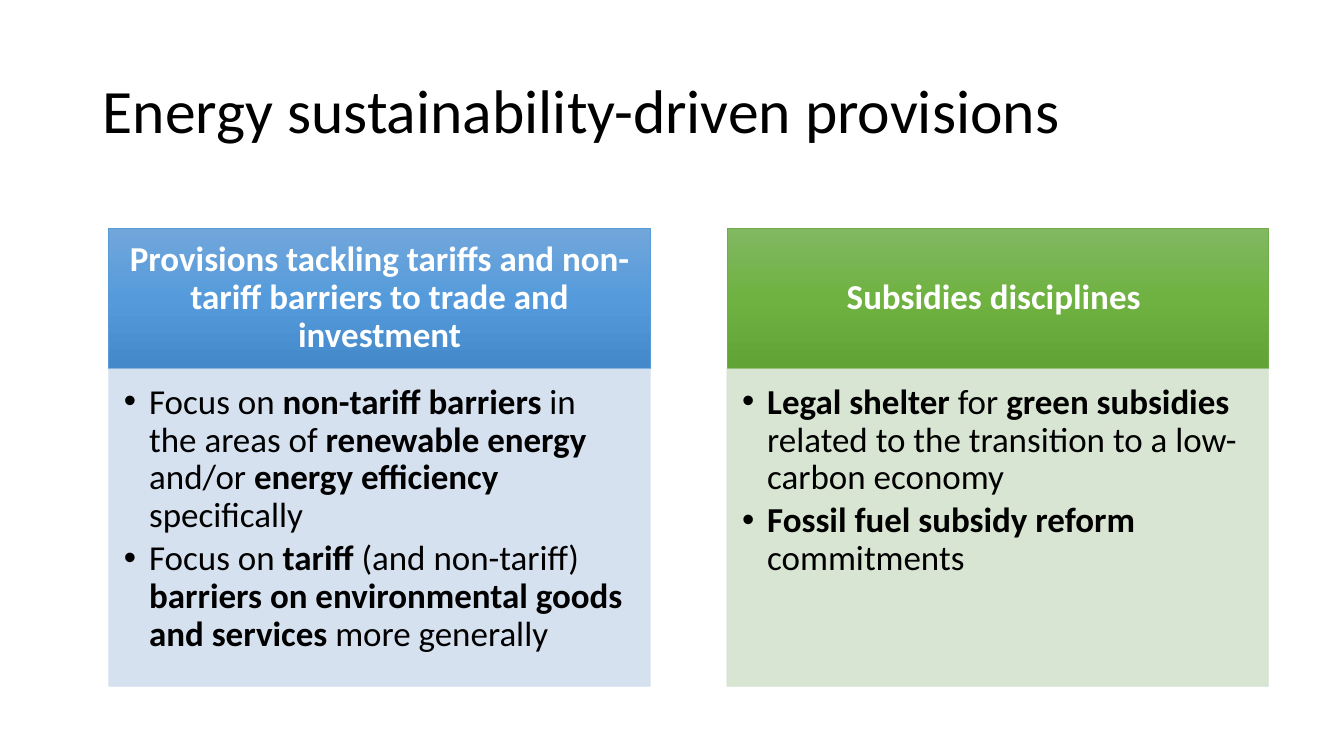
from lxml import etree
from pptx import Presentation
from pptx import util as u
from pptx.dml.color import RGBColor
from pptx.enum import shapes, text
from pptx.oxml import parse_xml
from pptx.oxml.ns import nsdecls, qn

# Content: each bullet is a list of (words, bold) runs
TITLE = "Energy sustainability-driven provisions"
COLUMNS = [
    {
        "heading": "Provisions tackling tariffs and non-tariff barriers to trade and investment",
        "gradient": ["71A6DB", "559BDB", "448ACA"],
        "edge": "5B9BD5",
        "tint": "D2DEEF",
        "bullets": [
            [("Focus on ", False), ("non-tariff barriers ", True),
             ("in the areas of ", False), ("renewable energy ", True),
             ("and/or ", False), ("energy efficiency ", True),
             ("specifically", False)],
            [("Focus on ", False), ("tariff", True), (" (and non-tariff) ", False),
             ("barriers on environmental goods and services ", True),
             ("more generally", False)],
        ],
    },
    {
        "heading": "Subsidies disciplines ",
        "gradient": ["81B861", "6FB242", "62A336"],
        "edge": "70AD47",
        "tint": "D5E3CF",
        "bullets": [
            [("Legal shelter ", True), ("for ", False), ("green subsidies ", True),
             ("related to the transition to a low-carbon economy", False)],
            [("Fossil fuel subsidy reform ", True), ("commitments", False)],
        ],
    },
]

# Layout in inches
FONT, TITLE_SIZE, TEXT_SIZE = "Calibri", 44, 25
LEFT, TOP, WIDTH, PITCH = 1.08, 2.27, 5.37, 6.13
HEAD_HEIGHT, BODY_TOP, BODY_HEIGHT = 1.38, 3.66, 3.15
INDENT = 0.25
OPACITY = 90


def color(value):
    return RGBColor.from_string(value)


def set_frame(box, insets, anchor):
    frame = box.text_frame
    frame.word_wrap = True
    frame.vertical_anchor = anchor
    (frame.margin_left, frame.margin_top,
     frame.margin_right, frame.margin_bottom) = map(u.Inches, insets)
    return frame


def write(para, runs, size, ink, space_after=0):
    para.line_spacing = 0.9
    para.space_after = u.Pt(space_after)
    for words, bold in runs:
        span = para.add_run()
        span.text = words
        span.font.name, span.font.size, span.font.bold = FONT, u.Pt(size), bold
        span.font.color.rgb = color(ink)


def add_box(left, top, height, edge):
    box = page.shapes.add_shape(
        shapes.MSO_SHAPE.RECTANGLE, *map(u.Inches, (left, top, WIDTH, height)))
    box.shadow.inherit = False
    box.line.color.rgb = color(edge)
    box.line.width = u.Pt(0.5)
    return box


def shade(box, stops):
    """Fill a box with evenly spaced colours running downwards."""
    step = 100000 // (len(stops) - 1)
    marks = "".join(
        f'<a:gs pos="{i * step}"><a:srgbClr val="{stop}"/></a:gs>'
        for i, stop in enumerate(stops))
    gradient = parse_xml(
        f'<a:gradFill {nsdecls("a")} rotWithShape="1"><a:gsLst>{marks}</a:gsLst>'
        '<a:lin ang="5400000" scaled="0"/></a:gradFill>')
    box.fill.solid()
    properties = box.element.spPr
    properties.replace(properties.find(qn("a:solidFill")), gradient)


def add_bullet(para):
    properties = para._p.get_or_add_pPr()
    properties.set("marL", str(u.Inches(INDENT)))
    properties.set("indent", str(-u.Inches(INDENT)))
    etree.SubElement(properties, qn("a:buFont")).set("typeface", "Arial")
    etree.SubElement(properties, qn("a:buChar")).set("char", "•")


deck = Presentation()
deck.slide_width, deck.slide_height = u.Inches(13.33), u.Inches(7.5)
page = deck.slides.add_slide(deck.slide_layouts[6])

# Title
title = page.shapes.add_textbox(*map(u.Inches, (0.92, 0.4, 11.5, 1.45)))
frame = set_frame(title, (0.1, 0.05, 0.1, 0.05), text.MSO_ANCHOR.MIDDLE)
write(frame.paragraphs[0], [(TITLE, False)], TITLE_SIZE, "000000")

for number, column in enumerate(COLUMNS):
    left = LEFT + number * PITCH

    # Heading band
    head = add_box(left, TOP, HEAD_HEIGHT, column["edge"])
    shade(head, column["gradient"])
    frame = set_frame(head, (0.19, 0.11, 0.19, 0.11), text.MSO_ANCHOR.MIDDLE)
    para = frame.paragraphs[0]
    para.alignment = text.PP_ALIGN.CENTER
    write(para, [(column["heading"], True)], TEXT_SIZE, "FFFFFF")

    # Bullet panel
    body = add_box(left, BODY_TOP, BODY_HEIGHT, column["tint"])
    body.fill.solid()
    body.fill.fore_color.rgb = color(column["tint"])
    for paint in body.element.spPr.iter(qn("a:srgbClr")):
        etree.SubElement(paint, qn("a:alpha")).set("val", str(OPACITY * 1000))
    frame = set_frame(body, (0.15, 0.15, 0.19, 0.22), text.MSO_ANCHOR.TOP)
    for index, runs in enumerate(column["bullets"]):
        para = frame.add_paragraph() if index else frame.paragraphs[0]
        para.alignment = text.PP_ALIGN.LEFT
        write(para, runs, TEXT_SIZE, "000000", space_after=0.15 * TEXT_SIZE)
        add_bullet(para)

deck.save("out.pptx")
